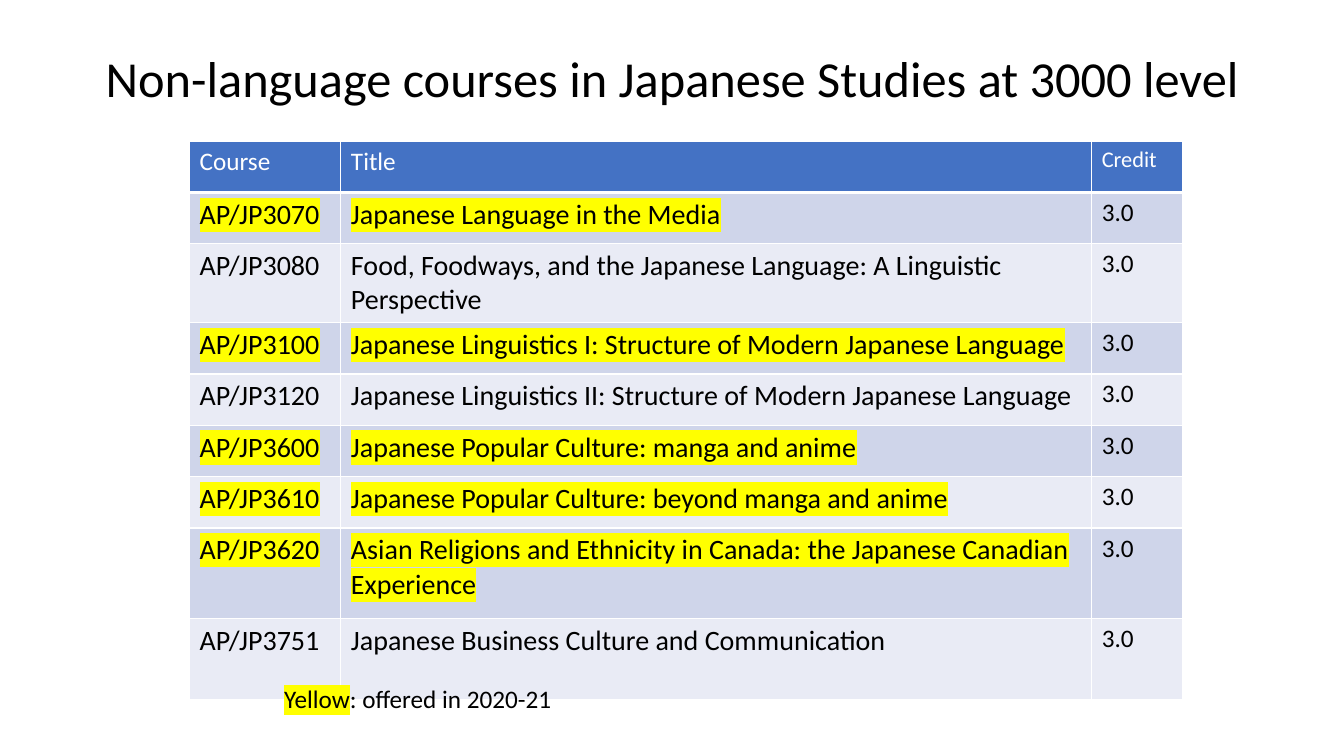
from pptx import Presentation
from pptx.dml.color import RGBColor
from pptx.enum.text import MSO_ANCHOR, PP_ALIGN
from pptx.oxml.ns import qn
from pptx.util import Inches, Pt
from lxml.etree import SubElement

YELLOW = "FFFF00"
BLACK = "000000"
WHITE = "FFFFFF"
HEADER_FILL = "4472C4"
BAND_FILLS = ("CFD5EA", "E9EBF5")

HEADINGS = (("Course", 18), ("Title", 18), ("Credit", 16))
COURSES = (
    ("AP/JP3070", "Japanese Language in the Media", True),
    ("AP/JP3080", "Food, Foodways, and the Japanese Language: A Linguistic Perspective", False),
    ("AP/JP3100", "Japanese Linguistics I: Structure of Modern Japanese Language", True),
    ("AP/JP3120", "Japanese Linguistics II: Structure of Modern Japanese Language", False),
    ("AP/JP3600", "Japanese Popular Culture: manga and anime", True),
    ("AP/JP3610", "Japanese Popular Culture: beyond manga and anime", True),
    ("AP/JP3620", "Asian Religions and Ethnicity in Canada: the Japanese Canadian Experience", True),
    ("AP/JP3751", "Japanese Business Culture and Communication", False),
)
CREDIT = "3.0"
COLUMN_SHARES = (1.5, 7.44, 0.9)
ROW_HEIGHT = 0.51
TALL_ROWS = {2: 0.78, 7: 0.9, 8: 0.8}


def color(hex_code):
    return RGBColor.from_string(hex_code)


def style(paragraph, size, hex_code=BLACK):
    font = paragraph.font
    font.name = "Calibri"
    font.size = Pt(size)
    font.bold = False
    font.color.rgb = color(hex_code)


def add_run(paragraph, text, highlighted=False):
    run = paragraph.add_run()
    run.text = text
    if highlighted:
        highlight = SubElement(run._r.get_or_add_rPr(), qn("a:highlight"))
        SubElement(highlight, qn("a:srgbClr"), val=YELLOW)


def set_borders(cell, bottom_width):
    properties = cell._tc.get_or_add_tcPr()
    for side, width in (("lnL", 1), ("lnR", 1), ("lnT", 1), ("lnB", bottom_width)):
        line = SubElement(properties, qn(f"a:{side}"), w=str(Pt(width)))
        fill = SubElement(line, qn("a:solidFill"))
        SubElement(fill, qn("a:srgbClr"), val=WHITE)


def fill_cell(cell, text, size, fill, text_color=BLACK, highlighted=False, bottom_width=1):
    set_borders(cell, bottom_width)
    cell.fill.solid()
    cell.fill.fore_color.rgb = color(fill)
    paragraph = cell.text_frame.paragraphs[0]
    style(paragraph, size, text_color)
    add_run(paragraph, text, highlighted)


def add_title(slide, left, top, width, height):
    frame = slide.shapes.add_textbox(Inches(left), Inches(top), Inches(width), Inches(height)).text_frame
    frame.word_wrap = True
    frame.vertical_anchor = MSO_ANCHOR.MIDDLE
    title = frame.paragraphs[0]
    title.alignment = PP_ALIGN.CENTER
    title.line_spacing = 0.9
    style(title, 36)
    add_run(title, "Non-language courses in Japanese Studies at 3000 level")


def add_course_table(slide, left, top, width, height):
    table = slide.shapes.add_table(
        len(COURSES) + 1, len(HEADINGS), Inches(left), Inches(top), Inches(width), Inches(height)
    ).table
    for column, share in zip(table.columns, COLUMN_SHARES):
        column.width = Inches(width * share / sum(COLUMN_SHARES))
    for index, row in enumerate(table.rows):
        row.height = Inches(TALL_ROWS.get(index, ROW_HEIGHT))

    for column, (heading, size) in enumerate(HEADINGS):
        fill_cell(table.cell(0, column), heading, size, HEADER_FILL, WHITE, bottom_width=3)
    for row, (code, name, offered) in enumerate(COURSES, start=1):
        band = BAND_FILLS[(row - 1) % 2]
        fill_cell(table.cell(row, 0), code, 20, band, highlighted=offered)
        fill_cell(table.cell(row, 1), name, 20, band, highlighted=offered)
        fill_cell(table.cell(row, 2), CREDIT, 18, band)


def add_legend(slide, left, top, width, height):
    frame = slide.shapes.add_textbox(Inches(left), Inches(top), Inches(width), Inches(height)).text_frame
    frame.word_wrap = True
    legend = frame.paragraphs[0]
    style(legend, 18)
    add_run(legend, "Yellow", highlighted=True)
    add_run(legend, ": offered in 2020-21")


def main():
    presentation = Presentation()
    presentation.slide_width = Inches(13.33)
    presentation.slide_height = Inches(7.5)
    slide = presentation.slides.add_slide(presentation.slide_layouts[6])
    add_title(slide, 0.92, 0.08, 11.5, 1.45)
    add_course_table(slide, 1.88, 1.4, 9.85, 5.54)
    add_legend(slide, 2.72, 6.73, 3.74, 0.4)
    presentation.save("out.pptx")


if __name__ == "__main__":
    main()
